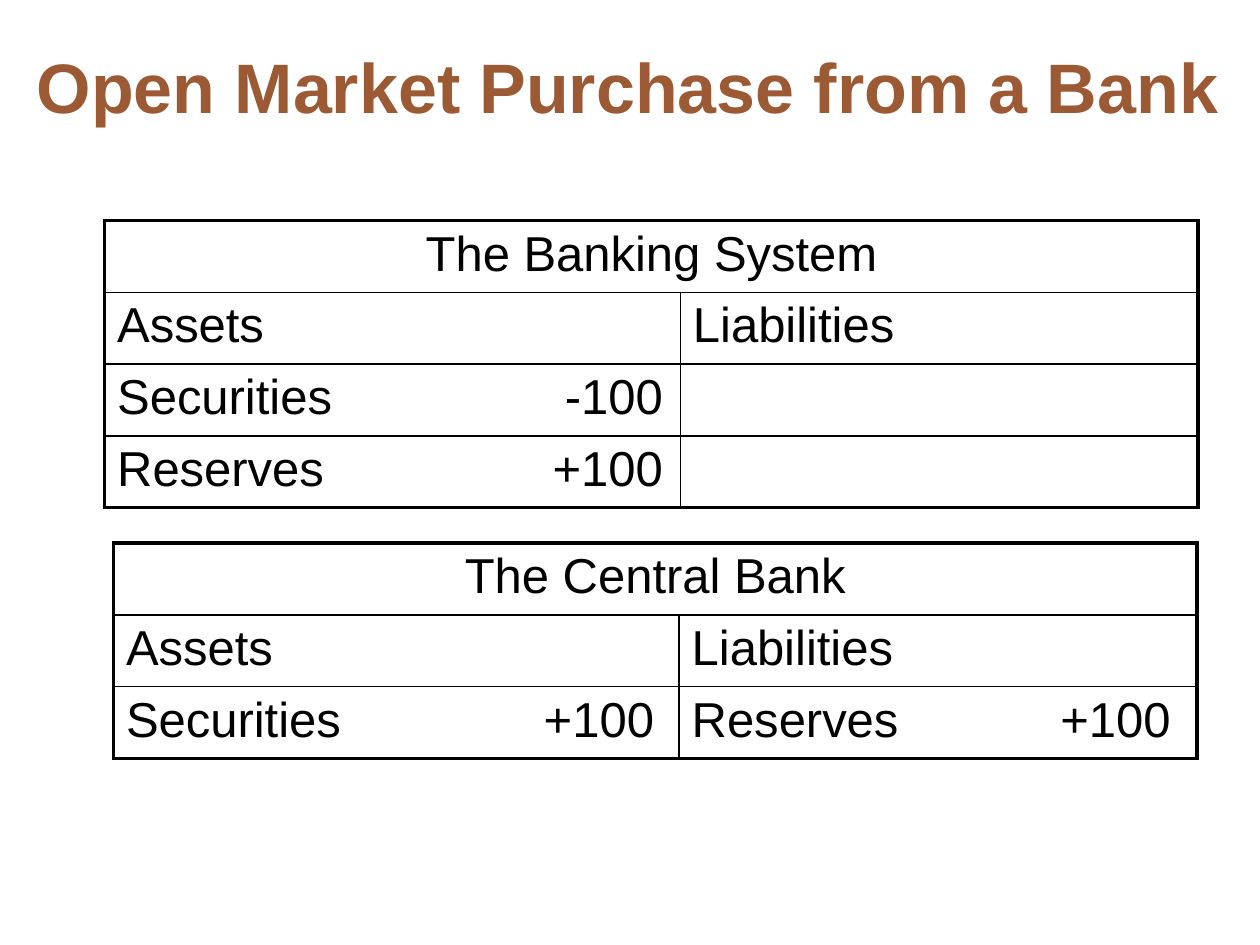
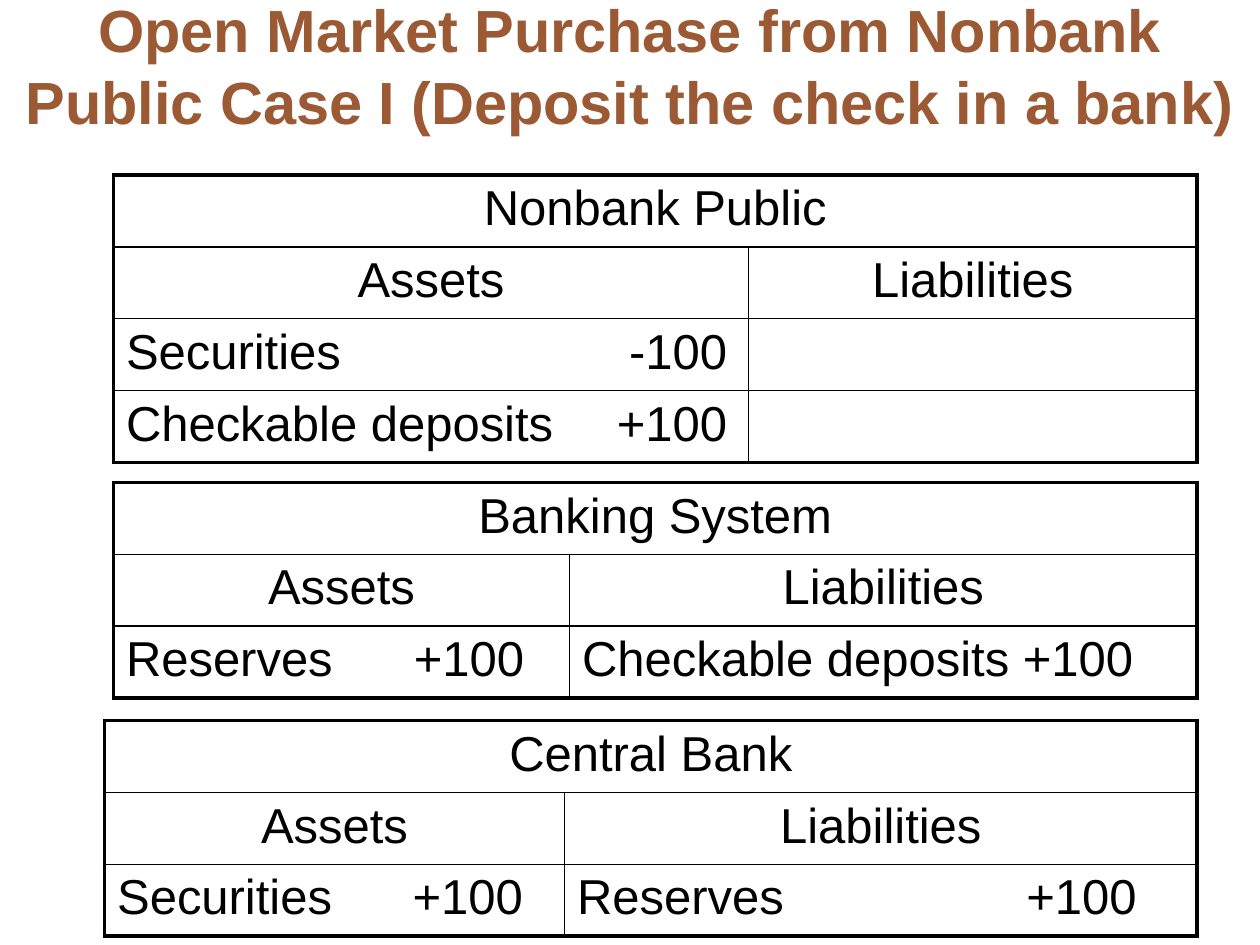
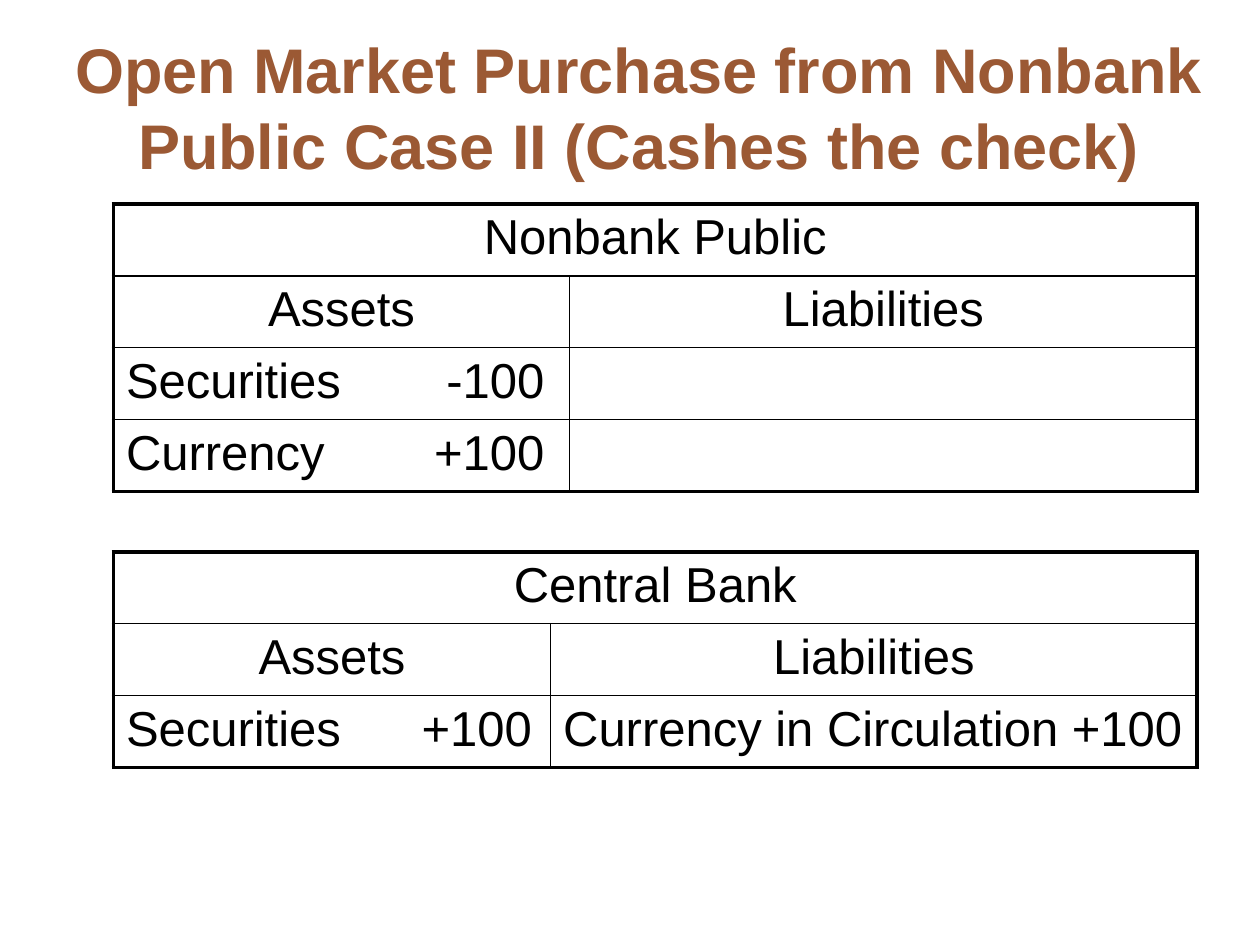
from lxml import etree
from pptx import Presentation
from pptx import util as u
from pptx.dml.color import RGBColor
from pptx.enum import text as t
from pptx.oxml.ns import qn

INK = {"title": "9B5934", "text": "000000", "line": "000000"}
FACE = "Arial"
ROW = 0.57
THICK, THIN = 2.25, 1
LEFT, MID = t.PP_ALIGN.LEFT, t.PP_ALIGN.CENTER
HEADS = ("Assets", "Liabilities")


def write(frame, words, size=28, color="text", bold=False, align=LEFT, tab=None):
    """Put one formatted paragraph in a frame, with an optional right tab."""
    para = frame.paragraphs[0]
    para.alignment = align
    if tab:
        stops = etree.SubElement(para._p.get_or_add_pPr(), qn("a:tabLst"))
        etree.SubElement(stops, qn("a:tab"), pos=str(u.Inches(tab)), algn="r")
    run = para.add_run()
    run.text = words
    font = run.font
    font.name, font.size, font.bold = FACE, u.Pt(size), bold
    font.color.rgb = RGBColor.from_string(INK[color])


def edge(cell, sides):
    """Draw the cell's borders from a dict of side to width in points."""
    props = cell._tc.get_or_add_tcPr()
    for spot, side in enumerate("LRTB"):
        line = etree.Element(qn("a:ln" + side), w=str(u.Pt(sides[side])))
        fill = etree.SubElement(line, qn("a:solidFill"))
        etree.SubElement(fill, qn("a:srgbClr"), val=INK["line"])
        props.insert(spot, line)


def start(deck, words, box, size):
    """Add a slide with its title."""
    slide = deck.slides.add_slide(deck.slide_layouts[5])
    title = slide.shapes.title
    title.left, title.top, title.width, title.height = map(u.Inches, box)
    frame = title.text_frame
    frame.word_wrap = True
    frame.auto_size = t.MSO_AUTO_SIZE.NONE
    frame.vertical_anchor = t.MSO_ANCHOR.MIDDLE
    write(frame, words, size=size, color="title", bold=True, align=MID)
    return slide


def sheet(slide, name, spot, cols, items, tabs, heads=MID):
    """Add a two-column balance sheet with a merged name row."""
    rows = [(name, ""), HEADS, *items]
    last = len(rows) - 1
    x, y = spot
    size = map(u.Inches, (x, y, sum(cols), ROW * len(rows)))
    table = slide.shapes.add_table(len(rows), 2, *size).table
    table.first_row = table.horz_banding = False
    for col, wide in zip(table.columns, cols):
        col.width = u.Inches(wide)
    table.cell(0, 0).merge(table.cell(0, 1))
    for r, row in enumerate(rows):
        table.rows[r].height = u.Inches(ROW)
        for c, words in enumerate(row):
            cell = table.cell(r, c)
            cell.fill.background()
            edge(cell, {
                "L": THICK if c == 0 else THIN,
                "R": THICK if c == 1 or r == 0 else THIN,
                "T": THICK if r == 0 else THIN,
                "B": THICK if r == last else THIN,
            })
            if words:
                align = (MID, heads)[r] if r < 2 else LEFT
                tab = tabs[c] if "\t" in words else None
                write(cell.text_frame, words, align=align, tab=tab)


def main():
    """Build the deck."""
    deck = Presentation()
    deck.slide_width, deck.slide_height = u.Inches(10), u.Inches(7.5)

    bank = start(deck, "Open Market Purchase from a Bank",
                 (0.08, 0.05, 9.8, 1.25), 40)
    sheet(bank, "The Banking System", (0.83, 1.75), (4.57, 4.11),
          [("Securities\t-100", ""), ("Reserves\t+100", "")],
          (4.33, None), heads=LEFT)
    sheet(bank, "The Central Bank", (0.9, 4.31), (4.49, 4.11),
          [("Securities\t+100", "Reserves\t+100")], (4.19, 3.8), heads=LEFT)

    check = start(deck, "Open Market Purchase from Nonbank Public Case I "
                  "(Deposit the check in a bank)", (0, -0.03, 10, 1.09), 34)
    sheet(check, "Nonbank Public", (0.9, 1.39), (5.04, 3.56),
          [("Securities\t-100", ""), ("Checkable deposits\t+100", "")],
          (4.77, None))
    sheet(check, "Banking System", (0.9, 3.83), (3.62, 4.98),
          [("Reserves\t+100", "Checkable deposits +100")], (3.16, None))
    sheet(check, "Central Bank", (0.83, 5.72), (3.65, 5.02),
          [("Securities\t+100", "Reserves\t+100")], (3.22, 4.44))

    cash = start(deck, "Open Market Purchase from Nonbank Public Case II "
                 "(Cashes the check)", (0.42, 0.3, 9.3, 1.09), 36)
    sheet(cash, "Central Bank", (0.9, 4.38), (3.47, 5.13),
          [("Securities\t+100", "Currency in Circulation +100")], (3.22, None))
    sheet(cash, "Nonbank Public", (0.9, 1.62), (3.62, 4.98),
          [("Securities\t-100", ""), ("Currency\t+100", "")], (3.32, None))

    deck.save("out.pptx")


if __name__ == "__main__":
    main()
